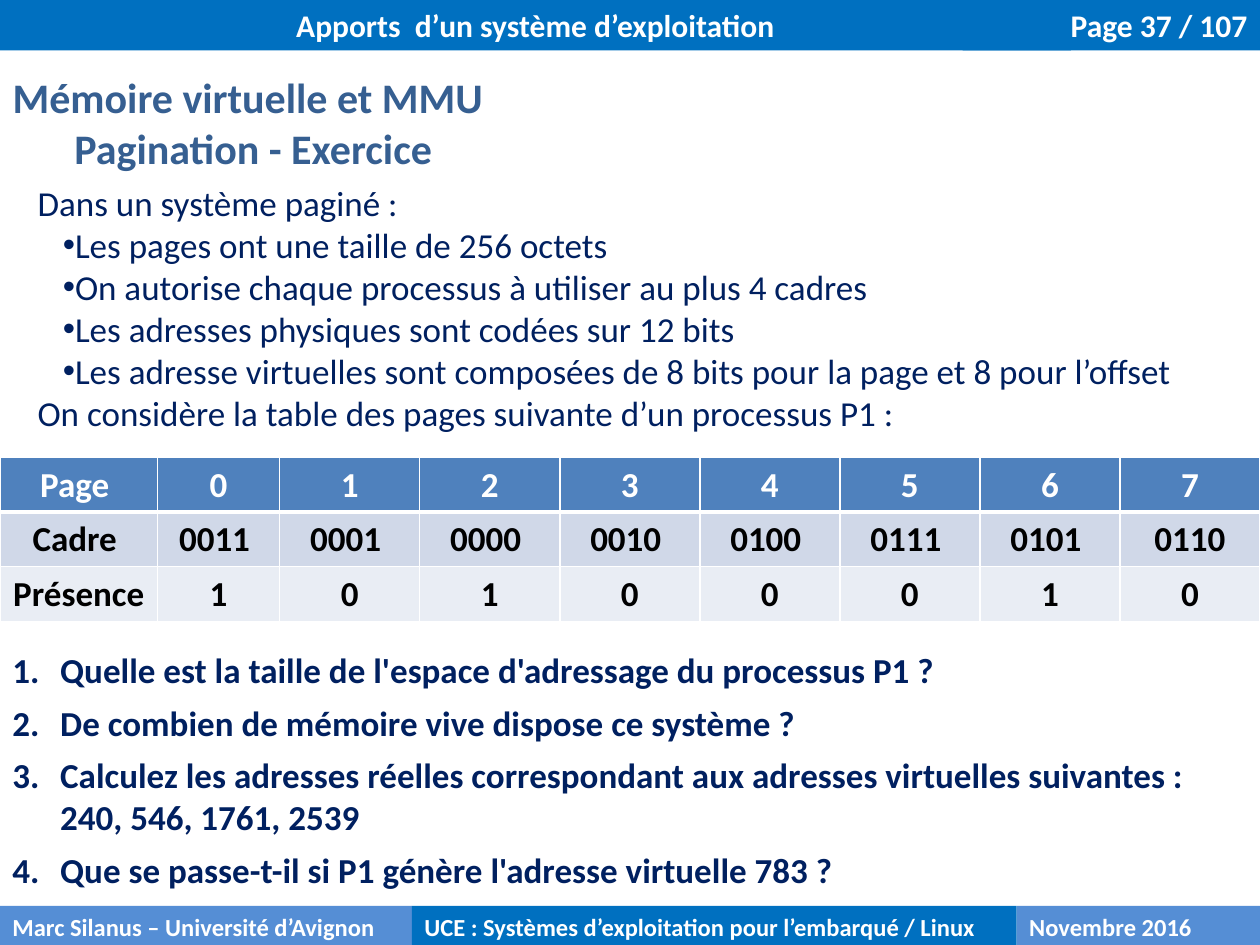
from lxml.etree import SubElement
from pptx import Presentation
from pptx.dml.color import RGBColor
from pptx.enum.shapes import MSO_SHAPE as Shape
from pptx.enum.text import MSO_ANCHOR as Anchor, MSO_AUTO_SIZE as AutoSize, PP_ALIGN as Align
from pptx.oxml.ns import qn
from pptx.util import Inches, Pt

WHITE, BLACK, NAVY = "FFFFFF", "000000", "002060"
BLUE, LIGHT_BLUE, HEADING = "0070C0", "558ED5", "365F91"
ROW_STYLES = [("4F81BD", WHITE), ("D0D8E8", BLACK), ("E9EDF4", BLACK)]


def color(value):
    """Return the colour for a hex string."""
    return RGBColor.from_string(value)


class SlideBuilder:
    """Hold the text style and the current slide."""

    def __init__(self, deck, font="Calibri"):
        """Add a title-only slide to the deck."""
        self.font = font
        self.page = deck.slides.add_slide(deck.slide_layouts[5])

    def fill_para(self, para, text, size, tint, bold=False, align=Align.LEFT):
        """Fill a paragraph with formatted text."""
        para.text = text
        para.alignment = align
        values = {"name": self.font, "size": Pt(size), "bold": bold}
        for span in para.runs:
            for name, value in values.items():
                setattr(span.font, name, value)
            span.font.color.rgb = color(tint)

    def indent(self, para, margin, first, tag=None, **attributes):
        """Set the indents and, if a tag is given, the bullet of a paragraph."""
        properties = para._p.get_or_add_pPr()
        properties.set("marL", str(Inches(margin)))
        properties.set("indent", str(Inches(first)))
        if tag:
            font = "Arial" if tag == "a:buChar" else self.font
            SubElement(properties, qn("a:buFont"), typeface=font)
            SubElement(properties, qn(tag), **attributes)

    def title(self, heading, subheading, left, top, width, height):
        """Place the title with its indented second line."""
        box = self.page.shapes.title
        places = {"left": left, "top": top, "width": width, "height": height}
        for name, value in places.items():
            setattr(box, name, Inches(value))
        frame = box.text_frame
        frame.auto_size = AutoSize.NONE
        frame.vertical_anchor = Anchor.TOP
        self.fill_para(frame.paragraphs[0], heading, 24, HEADING, True)
        para = frame.add_paragraph()
        self.indent(para, 0.49, 0)
        self.fill_para(para, subheading, 24, HEADING, True)

    def bar(self, text, left, top, width, height, fill, size, align=Align.LEFT):
        """Add a filled band with white bold text."""
        box = self.page.shapes.add_shape(
            Shape.RECTANGLE, *map(Inches, (left, top, width, height)))
        box.shadow.inherit = False
        box.fill.solid()
        box.fill.fore_color.rgb = color(fill)
        box.line.fill.background()
        box.text_frame.word_wrap = True
        box.text_frame.vertical_anchor = Anchor.TOP
        self.fill_para(box.text_frame.paragraphs[0], text, size, WHITE, True, align)

    def paragraphs(self, items, left, top, width, height, bold=False, gap=0):
        """Add a text box from pairs of text and indent format."""
        box = self.page.shapes.add_textbox(*map(Inches, (left, top, width, height)))
        frame = box.text_frame
        frame.word_wrap = True
        for index, (text, layout) in enumerate(items):
            para = frame.add_paragraph() if index else frame.paragraphs[0]
            if index:
                para.space_before = Pt(gap)
            if layout:
                self.indent(para, **layout)
            self.fill_para(para, text, 20, NAVY, bold)

    def border(self, cell, side, width):
        """Draw one white edge of a table cell."""
        edge = SubElement(cell._tc.get_or_add_tcPr(), qn(f"a:ln{side}"), w=str(Pt(width)))
        SubElement(SubElement(edge, qn("a:solidFill")), qn("a:srgbClr"), val=WHITE)

    def table(self, rows, widths, left, top, row_height):
        """Add the page table, one style per row."""
        frame = self.page.shapes.add_table(
            len(rows), len(widths), Inches(left), Inches(top),
            Inches(sum(widths)), Inches(row_height * len(rows)))
        grid = frame.table
        for column, width in zip(grid.columns, widths):
            column.width = Inches(width)
        for r, (texts, (fill, tint)) in enumerate(zip(rows, ROW_STYLES)):
            edges = {"L": 1, "R": 1, "T": 3 if r == 1 else 1, "B": 3 if r == 0 else 1}
            for c, text in enumerate(texts):
                cell = grid.cell(r, c)
                for side, width in edges.items():
                    self.border(cell, side, width)
                cell.fill.solid()
                cell.fill.fore_color.rgb = color(fill)
                self.fill_para(cell.text_frame.paragraphs[0], text, 20, tint, True, Align.CENTER)


def main():
    """Build the exercise slide."""
    deck = Presentation()
    deck.slide_width, deck.slide_height = Inches(10), Inches(7.5)
    slide = SlideBuilder(deck)
    slide.bar("Page 37 / 107", 7.64, 0, 2.36, 0.4, BLUE, 18, Align.RIGHT)
    slide.bar("Apports  d’un système d’exploitation", 0, 0, 8.5, 0.4, BLUE, 18, Align.CENTER)
    slide.title("Mémoire virtuelle et MMU", "Pagination - Exercice", 0, 0.52, 9.53, 0.91)

    footers = [
        ("Marc Silanus – Université d’Avignon", 3.27, LIGHT_BLUE),
        ("UCE : Systèmes d’exploitation pour l’embarqué / Linux", 4.8, BLUE),
        ("Novembre 2016", 1.93, LIGHT_BLUE),
    ]
    left = 0
    for text, width, fill in footers:
        slide.bar(text, left, 7.19, width, 0.34, fill, 14)
        left += width

    bullet = {"margin": 0, "first": 0.2, "tag": "a:buChar", "char": "•"}
    facts = [
        "Les pages ont une taille de 256 octets",
        "On autorise chaque processus à utiliser au plus 4 cadres",
        "Les adresses physiques sont codées sur 12 bits",
        "Les adresse virtuelles sont composées de 8 bits pour la page et 8 pour l’offset",
    ]
    statement = [
        ("Dans un système paginé :", None),
        *[(fact, bullet) for fact in facts],
        ("On considère la table des pages suivante d’un processus P1 :", None),
    ]
    slide.paragraphs(statement, 0.2, 1.39, 9.8, 2.12)

    frames = ["0011 ", "0001 ", "0000 ", "0010 ", "0100 ", "0111 ", "0101 ", "0110"]
    rows = [["Page ", *"01234567"], ["Cadre ", *frames], ["Présence ", *"10100010"]]
    first_widths = [1.25, 0.97]
    widths = first_widths + [(10 - sum(first_widths)) / 7] * 7
    slide.table(rows, widths, 0, 3.63, 0.43)

    number = {"margin": 0.38, "first": -0.38, "tag": "a:buAutoNum", "type": "arabicPeriod"}
    questions = [
        "Quelle est la taille de l'espace d'adressage du processus P1 ?",
        "De combien de mémoire vive dispose ce système ?",
        "Calculez les adresses réelles correspondant aux adresses virtuelles suivantes :\n"
        "240, 546, 1761, 2539",
        "Que se passe-t-il si P1 génère l'adresse virtuelle 783 ?",
    ]
    slide.paragraphs([(text, number) for text in questions], 0, 5.1, 10, 2.04, True, 6)
    deck.save("out.pptx")


if __name__ == "__main__":
    main()
